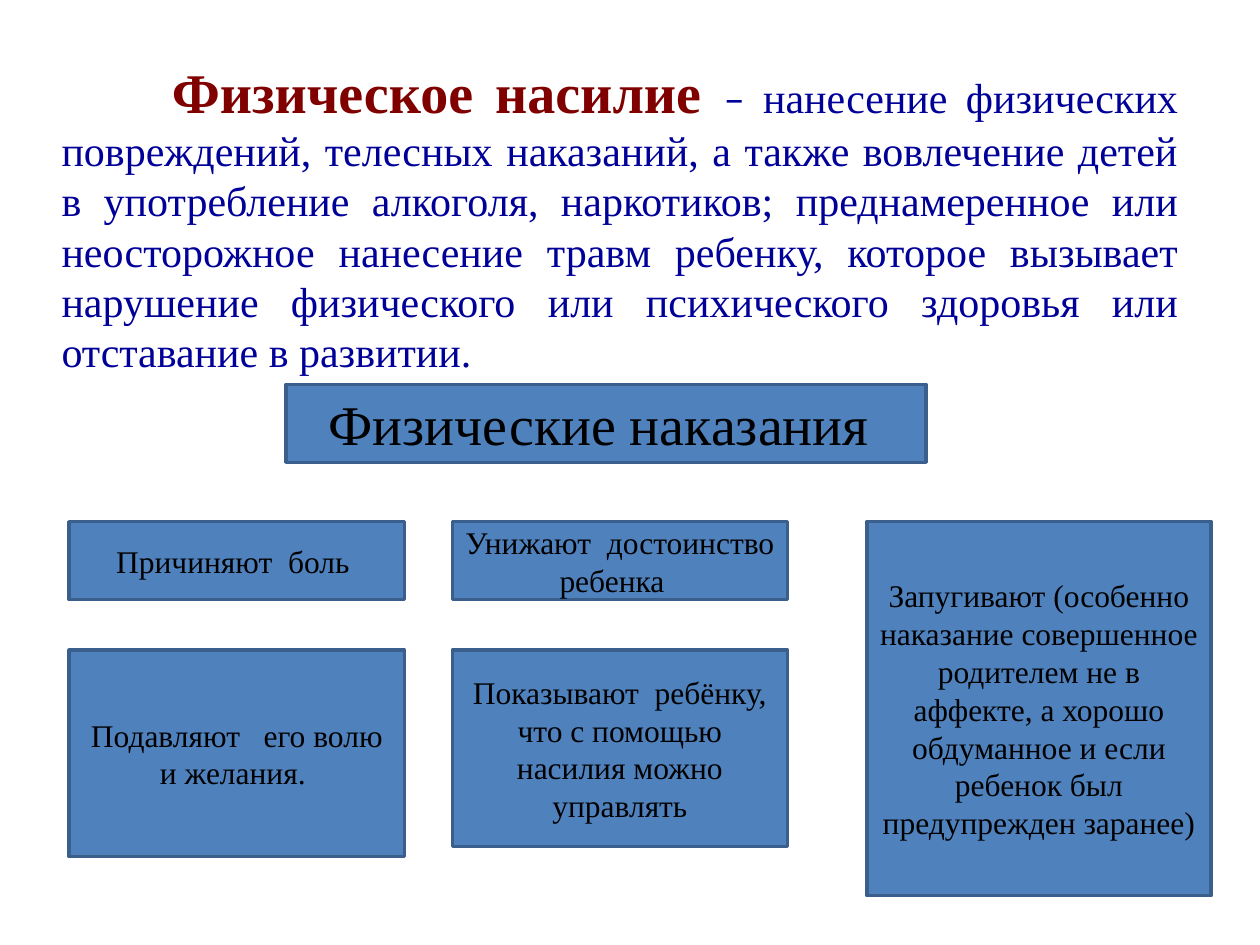
from pptx import Presentation
from pptx.dml.color import RGBColor
from pptx.enum.shapes import MSO_SHAPE as Shape
from pptx.enum.text import MSO_ANCHOR as Anchor, PP_ALIGN as Align
from pptx.util import Pt

SERIF = "Times New Roman"
COL_1, COL_2, COL_3 = 39.6, 258.5, 495.4
ROW_1, ROW_2 = 298.1, 371.5
BOX_W, BOX_H = 191.5, 44.6

TERM = "Физическое насилие "
DEFINITION = (
    " нанесение физических повреждений, телесных наказаний, а также вовлечение "
    "детей в употребление алкоголя, наркотиков; преднамеренное или неосторожное "
    "нанесение травм ребенку, которое вызывает нарушение физического или "
    "психического здоровья или отставание в развитии."
)
HEADING = "Физические наказания "
EFFECTS = [
    (COL_1, ROW_1, BOX_W, BOX_H, "Причиняют  боль "),
    (COL_2, ROW_1, BOX_W, BOX_H, "Унижают  достоинство ребенка  "),
    (COL_3, ROW_1, 196.6, 213.8,
     "Запугивают (особенно наказание совершенное родителем не в аффекте, "
     "а хорошо обдуманное и если ребенок был предупрежден заранее) "),
    (COL_2, ROW_2, BOX_W, 112.3,
     "Показывают  ребёнку, что с помощью насилия можно управлять"),
    (COL_1, ROW_2, BOX_W, 118.1, "Подавляют   его волю и желания. "),
]


def color(value):
    return RGBColor.from_string(value)


def style(font, size, hex_color, name=SERIF, bold=False):
    font.name, font.size, font.bold = name, Pt(size), bold
    font.color.rgb = color(hex_color)


def add_box(slide, left, top, width, height, text, size=18):
    s = slide.shapes.add_shape(
        Shape.RECTANGLE, Pt(left), Pt(top), Pt(width), Pt(height))
    s.shadow.inherit = False
    s.fill.solid()
    s.fill.fore_color.rgb = color("4F81BD")
    s.line.color.rgb = color("3A5F8C")
    s.line.width = Pt(2)
    tf = s.text_frame
    tf.word_wrap = True
    tf.vertical_anchor = Anchor.MIDDLE
    p = tf.paragraphs[0]
    p.text = text
    p.alignment = Align.CENTER
    style(p.font, size, "000000")


def add_definition(slide, left, top, width, height):
    tf = slide.shapes.add_textbox(
        Pt(left), Pt(top), Pt(width), Pt(height)).text_frame
    tf.word_wrap = True
    tf.vertical_anchor = Anchor.MIDDLE
    p = tf.paragraphs[0]
    p.alignment = Align.JUSTIFY
    p._p.get_or_add_pPr().set("indent", str(Pt(63)))
    runs = [
        (TERM, 32, "800000", SERIF, True),
        ("–", 24, "000099", "Calibri", False),
        (DEFINITION, 24, "000099", SERIF, False),
    ]
    for text, *look in runs:
        r = p.add_run()
        r.text = text
        style(r.font, *look)


def main():
    prs = Presentation()
    prs.slide_width, prs.slide_height = Pt(720), Pt(540)
    slide = prs.slides.add_slide(prs.slide_layouts[6])
    add_definition(slide, 28.1, 28.1, 652.3, 191.5)
    add_box(slide, 163.4, 219.6, 365.8, BOX_H, HEADING, size=32)
    for effect in EFFECTS:
        add_box(slide, *effect)
    prs.save("out.pptx")


if __name__ == "__main__":
    main()
